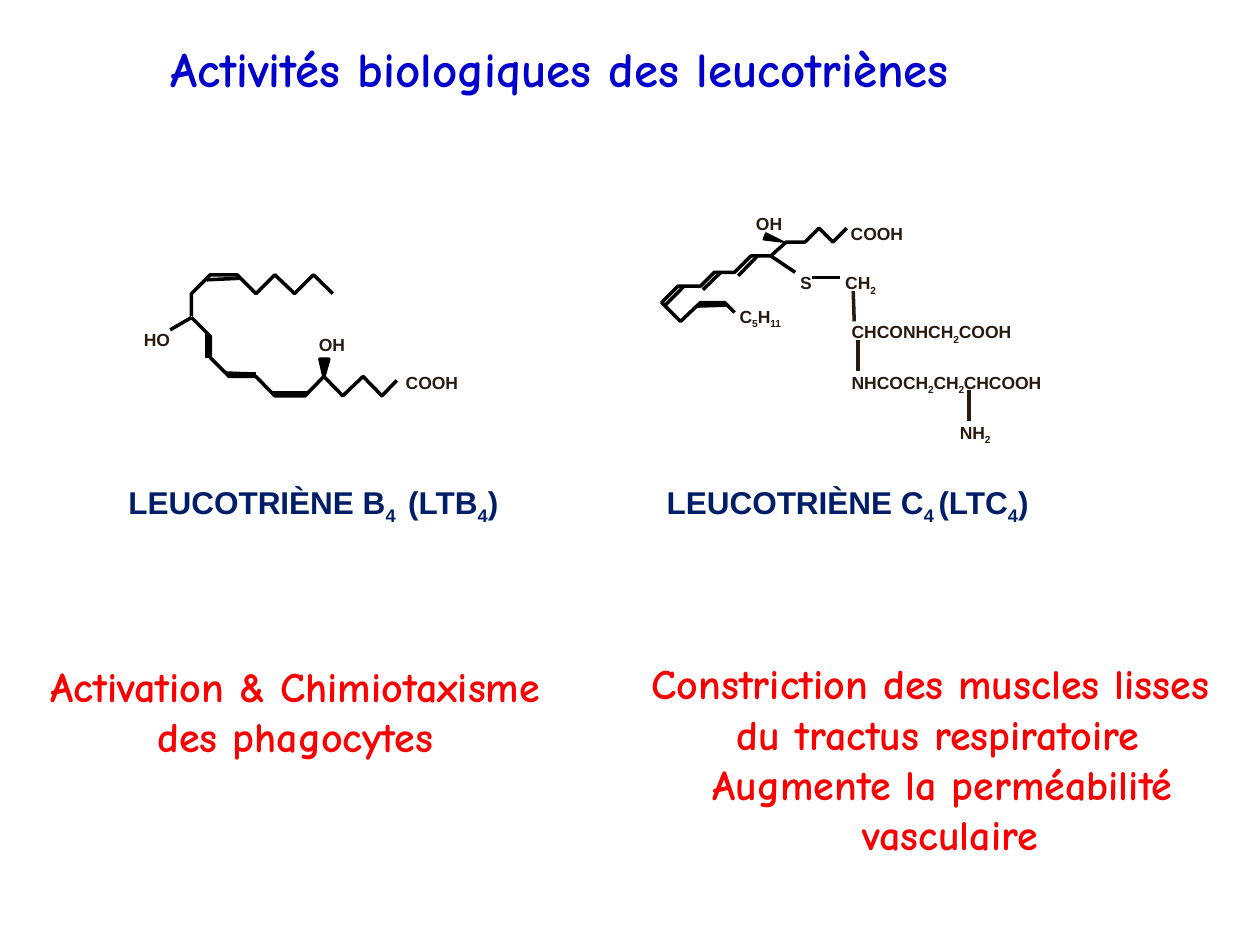
from itertools import groupby

from pptx import Presentation
from pptx import util as u
from pptx.dml.color import RGBColor
from pptx.enum import shapes, text
from pptx.oxml.ns import qn
from lxml import etree

THEME = {
    "bond": "000000", "bond_pt": 2,
    # text style: font, size, colour
    "title": ("Comic Neue", 28, "0000CC"),
    "effect": ("Comic Neue", 24, "FA0000"),
    "name": ("Arial", 18, "001E68"),
    "atom": ("Arial", 10, "291A10"),
}

# All positions in cm; every digit in a formula or name is a subscript
LTB4 = {
    "chains": [
        [(6.71, 5.92), (6.32, 5.54), (5.94, 5.92), (5.54, 5.54), (5.16, 5.92),
         (4.78, 5.54), (4.24, 5.54), (3.86, 5.92), (3.86, 6.38)],
        [(3.86, 6.4), (4.24, 6.78), (4.24, 7.21), (4.62, 7.59), (5.16, 7.59),
         (5.54, 7.98), (6.15, 7.98), (6.53, 7.59), (6.91, 7.98), (7.32, 7.59),
         (7.7, 7.98), (8, 7.67)],
    ],
    "wedge": ([(6.53, 7.59), (6.63, 7.24), (6.45, 7.24)], 2),
    "bonds": [
        (4.83, 5.61, 4.17, 5.64), (4.17, 6.71, 4.17, 7.21),
        (4.55, 7.52, 5.16, 7.54), (5.46, 7.92, 6.22, 7.92),
        (3.86, 6.4, 3.43, 6.65),
    ],
    "links": [],
    "atoms": [("OH", 6.43, 6.73, 0.56), ("COOH", 8.18, 7.49, 1.09),
              ("HO", 2.9, 6.63, 0.56)],
}
LTC4 = {
    "chains": [
        [(17.07, 4.6), (16.79, 4.88), (16.51, 4.6), (16.23, 4.88),
         (15.85, 4.88), (15.54, 5.16), (15.14, 5.16), (14.81, 5.49),
         (14.4, 5.49), (14.12, 5.77), (13.67, 5.77), (13.34, 6.1),
         (13.72, 6.48), (14.12, 6.1), (14.61, 6.1), (14.81, 6.3)],
    ],
    "wedge": ([(15.8, 4.88), (15.44, 4.7), (15.39, 4.83)], 1),
    "bonds": [
        (14.68, 6.15, 14.05, 6.17), (15.27, 5.16, 14.88, 5.56),
        (14.53, 5.49, 14.17, 5.84), (13.41, 6.15, 13.79, 5.77),
        (15.54, 5.16, 16.03, 5.49), (16.36, 5.59, 16.94, 5.59),
    ],
    # bonds between the groups of the peptide part
    "links": [(17.2, 5.87, 17.22, 6.48), (17.3, 6.86, 17.3, 7.47),
              (19.53, 7.87, 19.53, 8.48)],
    "atoms": [
        ("OH", 15.24, 4.29, 0.56), ("COOH", 17.15, 4.5, 1.09),
        ("C5H11", 14.91, 6.17, 0.94), ("S", 16.13, 5.49, 0.25),
        ("CH2", 17.04, 5.49, 0.69),
        ("CHCONHCH2", 17.17, 6.48, 2.31), ("COOH", 19.33, 6.48, 1.09),
        ("NHCOCH2", 17.17, 7.49, 1.78), ("CH2", 18.82, 7.49, 0.69),
        ("CHCOOH", 19.43, 7.49, 1.65), ("NH2", 19.35, 8.51, 0.69),
    ],
}
# text, left, width
NAMES = [("LEUCOTRIÈNE B4", 2.59, 5.54), ("(LTB4)", 8.23, 1.93),
         ("LEUCOTRIÈNE C4", 13.44, 5.54), ("(LTC4)", 18.92, 1.93)]
# lines, left, top, width
EFFECTS = [
    (["Activation & Chimiotaxisme", "des phagocytes"], 0.3, 13.31, 11.3),
    (["Constriction des muscles lisses", " du tractus respiratoire"],
     12.42, 13.26, 12.67),
    (["Augmente la perméabilité ", "vasculaire"], 13.69, 15.29, 10.92),
]
TITLE = "Activités biologiques des leucotriènes"


def add_text(parent, lines, style, x, y, w, h, inset=0, align=text.PP_ALIGN.LEFT):
    font, size, color = THEME[style]
    tf = parent.add_textbox(u.Cm(x), u.Cm(y), u.Cm(w), u.Cm(h)).text_frame
    tf.word_wrap = False
    tf.auto_size = text.MSO_AUTO_SIZE.SHAPE_TO_FIT_TEXT
    tf.margin_left = tf.margin_right = u.Cm(inset)
    tf.margin_top = tf.margin_bottom = u.Cm(inset / 2)
    for i, line in enumerate(lines):
        p = tf.add_paragraph() if i else tf.paragraphs[0]
        p.alignment = align
        p.font.name, p.font.size, p.font.bold = font, u.Pt(size), True
        p.font.color.rgb = RGBColor.from_string(color)
        for is_sub, chars in groupby(line, str.isdigit):
            r = p.add_run()
            r.text = "".join(chars)
            if is_sub:
                r.font._element.set("baseline", "-25000")


def set_line(sp, color, width):
    sp.line.color.rgb = RGBColor.from_string(color)
    sp.line.width = u.Pt(width)


def add_bond(parent, ends, color):
    sp = parent.add_connector(shapes.MSO_CONNECTOR.STRAIGHT, *map(u.Cm, ends))
    set_line(sp, color, THEME["bond_pt"])
    etree.SubElement(sp._element.spPr, qn("a:effectLst"))


def add_outline(parent, points, width, closed=False):
    start, *rest = [(u.Cm(x), u.Cm(y)) for x, y in points]
    fb = parent.build_freeform(*start)
    fb.add_line_segments(rest, close=closed)
    sp = fb.convert_to_shape()
    sp.shadow.inherit = False
    if closed:
        sp.fill.solid()
        sp.fill.fore_color.rgb = RGBColor.from_string(THEME["bond"])
    else:
        sp.fill.background()
    set_line(sp, THEME["bond"], width)


def add_molecule(s, mol):
    parent = s.shapes.add_group_shape().shapes
    for chain in mol["chains"]:
        add_outline(parent, chain, THEME["bond_pt"])
    add_outline(parent, *mol["wedge"], closed=True)
    for ends in mol["bonds"]:
        add_bond(parent, ends, THEME["bond"])
    for ends in mol["links"]:
        add_bond(parent, ends, THEME["atom"][2])
    for label, x, y, w in mol["atoms"]:
        add_text(parent, [label], "atom", x, y, w, 0.43)


def main():
    prs = Presentation()
    prs.slide_width, prs.slide_height = u.Cm(25.4), u.Cm(19.05)
    s = prs.slides.add_slide(prs.slide_layouts[6])

    # Title
    add_text(s.shapes, [TITLE], "title", 3.18, 0.66, 18.72, 1.45, inset=0.25)
    # Structures
    for mol in (LTB4, LTC4):
        add_molecule(s, mol)
    # Names under the structures
    for name, x, w in NAMES:
        add_text(s.shapes, [name], "name", x, 9.73, w, 0.76)
    # Biological effects
    for lines, x, y, w in EFFECTS:
        add_text(s.shapes, lines, "effect", x, y, w, 2.06,
                 align=text.PP_ALIGN.CENTER)

    prs.save("out.pptx")


if __name__ == "__main__":
    main()
